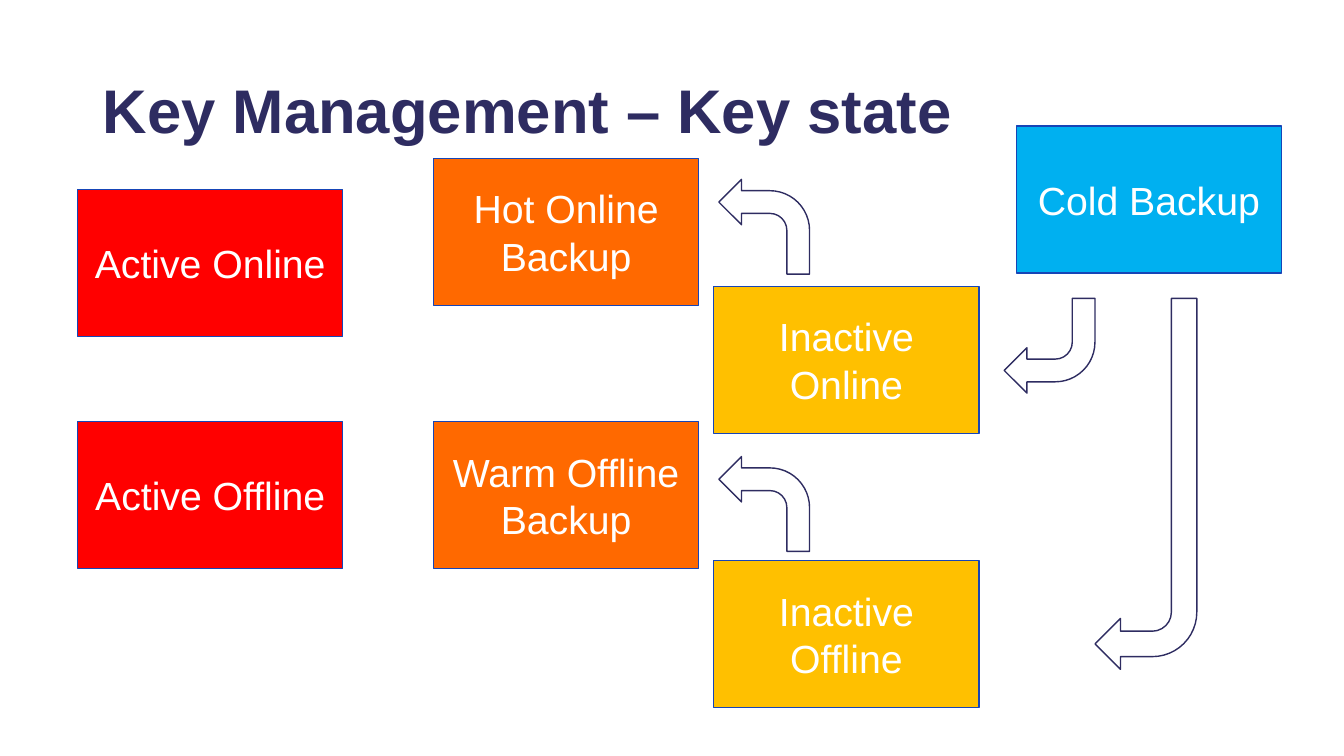
from dataclasses import dataclass

from pptx import Presentation
from pptx.dml.color import RGBColor
from pptx.enum.shapes import MSO_SHAPE as Preset
from pptx.enum.text import MSO_ANCHOR as Anchor, PP_ALIGN as Align
from pptx.oxml.ns import qn
from pptx.shapes.autoshape import Shape
from pptx.slide import Slide
from pptx.util import Inches, Pt

NAVY, BLUE, WHITE = "2E2C61", "1645B7", "FFFFFF"
RED, ORANGE, AMBER, SKY = "FF0000", "FF6900", "FFC000", "00B0F0"
STATE_WIDTH, STATE_HEIGHT = 2.63, 1.46
ACTIVE_LEFT, BACKUP_LEFT, INACTIVE_LEFT, COLD_LEFT = 0.77, 4.3, 7.08, 10.08
OFFLINE_TOP = 4.18

TITLE_FONT = {"name": "Arial", "size": Pt(44), "bold": True}
STATE_FONT = {"name": "Arial", "size": Pt(28)}


@dataclass
class KeyState:
    lines: tuple[str, ...]
    left: float
    top: float
    fill: str


@dataclass
class Transition:
    left: float
    top: float
    width: float = 0.9
    height: float = 0.94
    rotation: float = 0
    mirrored: bool = False


STATES = [
    KeyState(("Active Online",), ACTIVE_LEFT, 1.88, RED),
    KeyState(("Active Offline",), ACTIVE_LEFT, OFFLINE_TOP, RED),
    KeyState(("Cold Backup",), COLD_LEFT, 1.25, SKY),
    KeyState(("Hot Online Backup",), BACKUP_LEFT, 1.57, ORANGE),
    KeyState(("Warm Offline Backup",), BACKUP_LEFT, OFFLINE_TOP, ORANGE),
    KeyState(("Inactive Online",), INACTIVE_LEFT, 2.84, AMBER),
    KeyState(("Inactive", "Offline"), INACTIVE_LEFT, 5.56, AMBER),
]

TRANSITIONS = [
    Transition(9.96, 2.96, rotation=180),
    Transition(10.86, 2.96, 1.01, 3.68, rotation=180),
    Transition(7.13, 4.53, mirrored=True),
    Transition(7.13, 1.78, mirrored=True),
]


def color(value: str) -> RGBColor:
    return RGBColor.from_string(value)


def write_text(box: Shape, lines: tuple[str, ...], font: dict, ink: str,
               layout: dict) -> None:
    frame = box.text_frame
    frame.word_wrap = True
    frame.vertical_anchor = Anchor.MIDDLE
    for index, line in enumerate(lines):
        para = frame.add_paragraph() if index else frame.paragraphs[0]
        for name, value in layout.items():
            setattr(para, name, value)
        span = para.add_run()
        span.text = line
        for name, value in font.items():
            setattr(span.font, name, value)
        span.font.color.rgb = color(ink)


def add_outlined(page: Slide, preset: Preset, place: tuple[float, ...],
                 fill: str, line: str) -> Shape:
    shape = page.shapes.add_shape(preset, *map(Inches, place))
    shape.shadow.inherit = False
    shape.fill.solid()
    shape.fill.fore_color.rgb = color(fill)
    shape.line.color.rgb = color(line)
    shape.line.width = Pt(1)
    return shape


def draw_title(page: Slide, title: str) -> None:
    box = page.shapes.add_textbox(*map(Inches, (0.92, 0.4, 11.5, 1.45)))
    write_text(box, (title,), TITLE_FONT, NAVY, {"line_spacing": 0.9})


def draw_state(page: Slide, state: KeyState) -> None:
    place = (state.left, state.top, STATE_WIDTH, STATE_HEIGHT)
    box = add_outlined(page, Preset.RECTANGLE, place, state.fill, BLUE)
    write_text(box, state.lines, STATE_FONT, WHITE, {"alignment": Align.CENTER})


def draw_transition(page: Slide, move: Transition) -> None:
    place = (move.left, move.top, move.width, move.height)
    arrow = add_outlined(page, Preset.BENT_ARROW, place, WHITE, NAVY)
    arrow.rotation = move.rotation
    if move.mirrored:
        arrow.element.spPr.find(qn("a:xfrm")).set("flipH", "1")


def main() -> None:
    deck = Presentation()
    deck.slide_width, deck.slide_height = Inches(13.33), Inches(7.5)
    page = deck.slides.add_slide(deck.slide_layouts[6])
    draw_title(page, "Key Management – Key state")
    for state in STATES:
        draw_state(page, state)
    for move in TRANSITIONS:
        draw_transition(page, move)
    deck.save("out.pptx")


if __name__ == "__main__":
    main()
